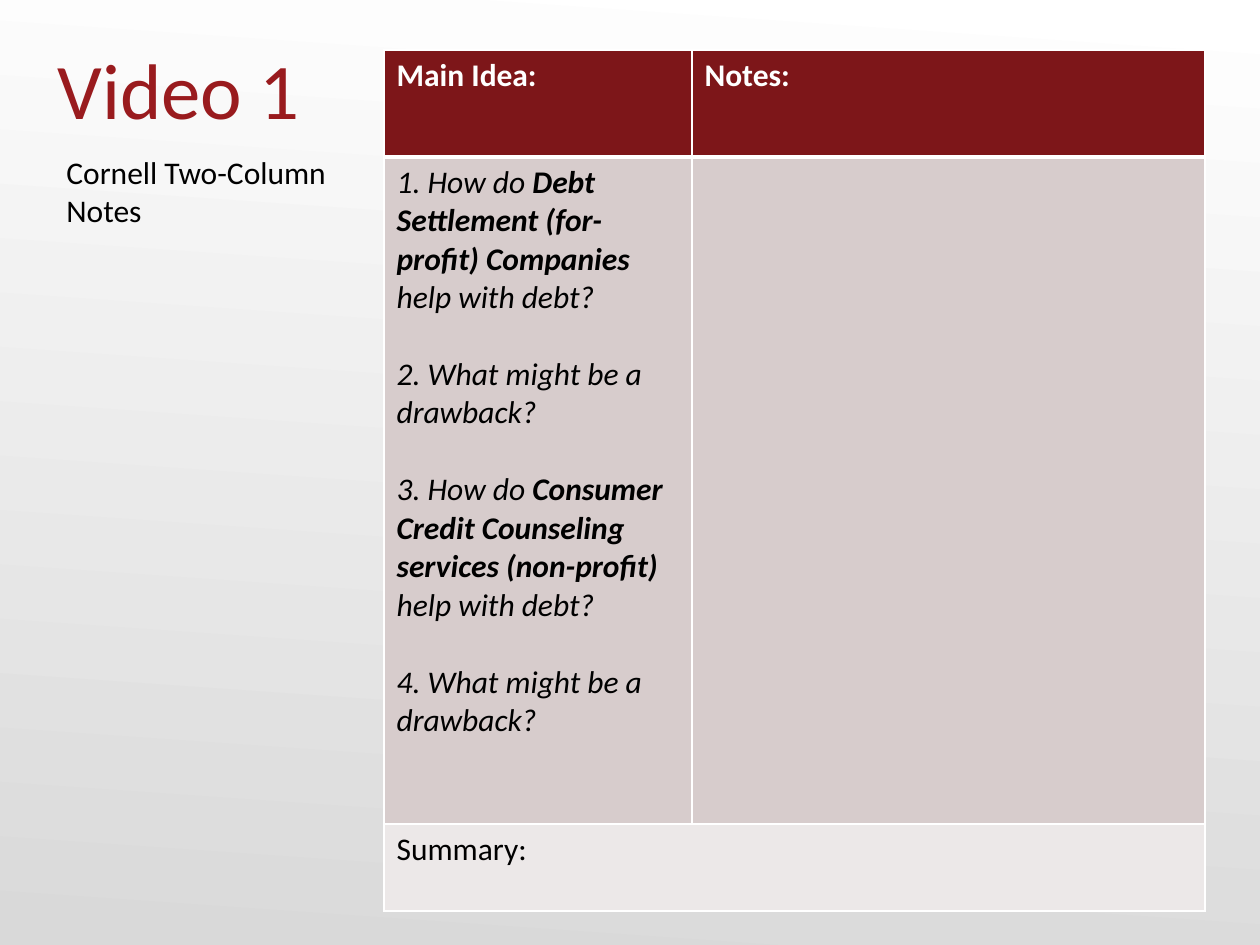
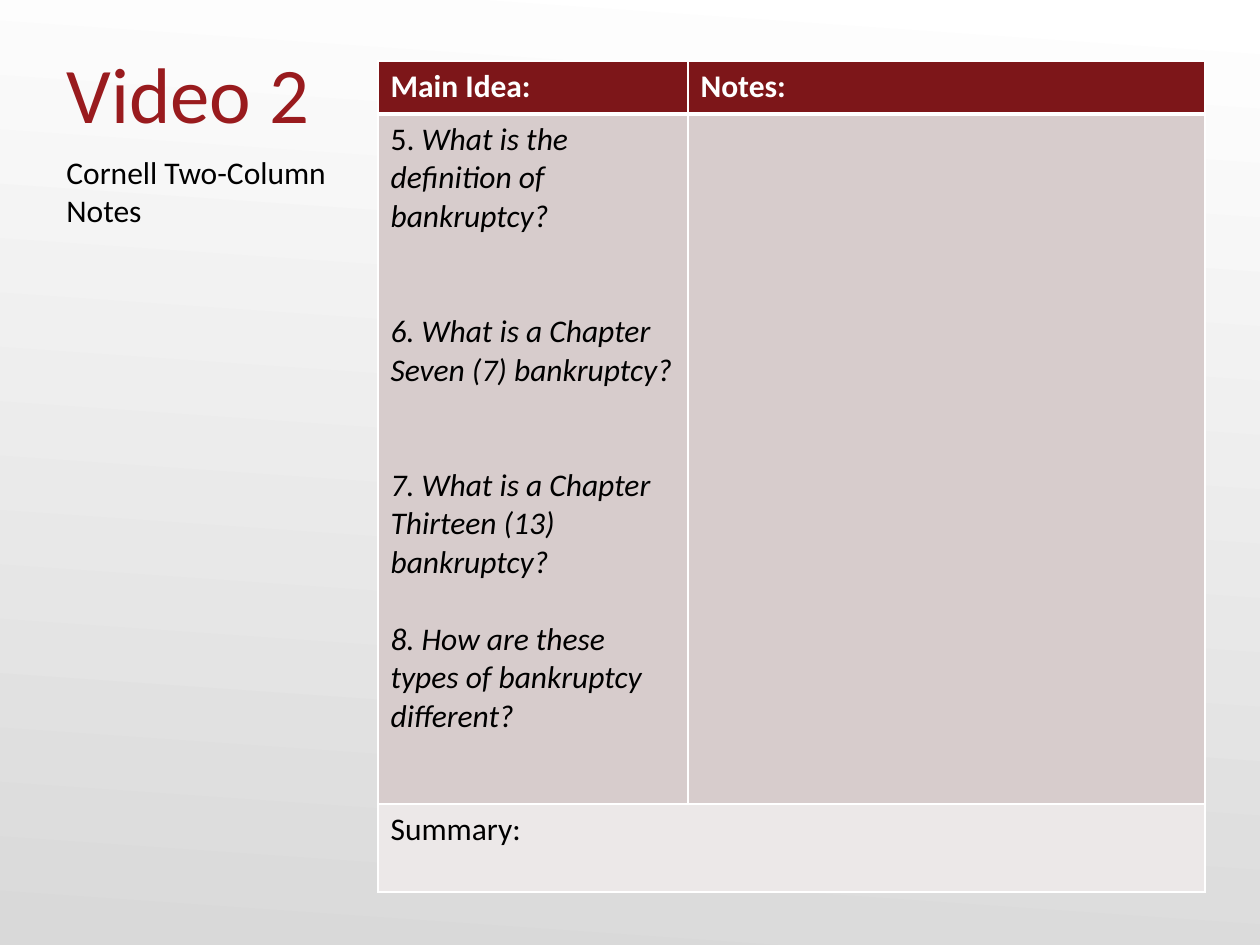
from dataclasses import dataclass
from typing import NamedTuple

from lxml.etree import SubElement
from pptx import Presentation
from pptx.dml.color import RGBColor
from pptx.enum.text import PP_ALIGN
from pptx.oxml.ns import qn
from pptx.util import Emu, Pt


@dataclass(frozen=True)
class Theme:
    face: str = "Calibri"
    title: int = 45
    body: int = 18
    line: int = 22  # height of one body line, in points
    red: str = "991B1E"
    head: str = "7D1619"
    rose: str = "D7CCCC"
    pale: str = "ECE8E8"
    white: str = "FFFFFF"
    grey: str = "D9D9D9"
    black: str = "000000"
    angle: int = 266


THEME = Theme()


class Box(NamedTuple):
    left: int
    top: int
    width: int
    height: int


class Run(NamedTuple):
    text: str
    bold: bool | None = None
    slant: bool | None = None


class Para(NamedTuple):
    runs: list[Run]
    gap: int = 0  # free lines above
    bold: bool = False
    slant: bool = False


@dataclass(frozen=True)
class Page:
    title: str
    spot: Box
    align: PP_ALIGN
    left: int
    top: int
    cols: list[int]
    rows: list[int]
    asks: list[Para]


def px(count: int) -> Emu:
    """Turn pixels (126 to the inch) into EMU."""
    return Emu(round(count * 914400 / 126))


def ask(*runs: Run, gap: int = 0) -> Para:
    return Para(list(runs), gap, slant=True)


def write(frame, paras: list[Para], size: int, color: str) -> None:
    for spot, para in enumerate(paras):
        line = frame.add_paragraph() if spot else frame.paragraphs[0]
        font = line.font
        font.name, font.size = THEME.face, Pt(size)
        font.bold, font.italic = para.bold, para.slant
        font.color.rgb = RGBColor.from_string(color)
        if para.gap:
            line.space_before = Pt(para.gap * THEME.line)
        for part in para.runs:
            run = line.add_run()
            run.text = part.text
            if part.bold is not None:
                run.font.bold = part.bold
            if part.slant is not None:
                run.font.italic = part.slant


def label(slide, box: Box, text: str, size: int, color: str,
          align: PP_ALIGN = PP_ALIGN.LEFT) -> None:
    frame = slide.shapes.add_textbox(*map(px, box)).text_frame
    frame.word_wrap = True
    write(frame, [Para([Run(text)])], size, color)
    frame.paragraphs[0].alignment = align


def edge(cell, top: int, base: int) -> None:
    """Draw white cell borders; widths are in points."""
    props = cell._tc.get_or_add_tcPr()
    for side, width in (("L", 1), ("R", 1), ("T", top), ("B", base)):
        line = SubElement(props, qn(f"a:ln{side}"), w=str(Pt(width)))
        fill = SubElement(line, qn("a:solidFill"))
        SubElement(fill, qn("a:srgbClr"), val=THEME.white)


def grid(slide, page: Page) -> None:
    size = sum(page.cols), sum(page.rows)
    box = Box(page.left, page.top, *size)
    table = slide.shapes.add_table(
        len(page.rows), len(page.cols), *map(px, box)).table
    for col, width in zip(table.columns, page.cols):
        col.width = px(width)
    # Each row: fill, top border, bottom border
    looks = [(THEME.head, 1, 3), (THEME.rose, 3, 1), (THEME.pale, 1, 1)]
    for row, height, (fill, top, base) in zip(table.rows, page.rows, looks):
        row.height = px(height)
        for cell in row.cells:
            edge(cell, top, base)
            cell.fill.solid()
            cell.fill.fore_color.rgb = RGBColor.from_string(fill)
    # Cell text
    for col, text in enumerate(("Main Idea:", "Notes:")):
        write(table.cell(0, col).text_frame,
              [Para([Run(text)], bold=True)], THEME.body, THEME.white)
    write(table.cell(1, 0).text_frame, page.asks, THEME.body, THEME.black)
    table.cell(2, 0).merge(table.cell(2, 1))
    write(table.cell(2, 0).text_frame,
          [Para([Run("Summary:")])], THEME.body, THEME.black)


def shade(slide) -> None:
    fill = slide.background.fill
    fill.gradient()
    fill.gradient_angle = THEME.angle
    for stop, place, color in zip(
            fill.gradient_stops, (0, 1), (THEME.white, THEME.grey)):
        stop.position = place
        stop.color.rgb = RGBColor.from_string(color)


def draw(deck, page: Page) -> None:
    slide = deck.slides.add_slide(deck.slide_layouts[6])
    shade(slide)
    grid(slide, page)
    label(slide, page.spot, page.title, THEME.title, THEME.red, page.align)
    label(slide, Box(54, 147, 297, 127), "Cornell Two-Column Notes",
          THEME.body, THEME.black)


PAGES = [
    Page("Video 1", Box(45, 35, 336, 108), PP_ALIGN.LEFT,
         384, 50, [308, 513], [107, 667, 87], [
             ask(Run("1. How do "),
                 Run("Debt Settlement (for-profit) Companies ", bold=True),
                 Run("help with debt?")),
             ask(Run("2. What might be a drawback?"), gap=1),
             ask(Run("3. How do "),
                 Run("Consumer Credit Counseling services (non-profit) ",
                     bold=True),
                 Run("help with debt?"), gap=1),
             ask(Run("4. What might be a drawback?"), gap=1),
         ]),
    Page("Video 2", Box(20, 39, 336, 108), PP_ALIGN.CENTER,
         378, 61, [310, 517], [53, 690, 88], [
             ask(Run("5. ", slant=False),
                 Run("What is the definition of bankruptcy?")),
             ask(Run("6. What is a Chapter Seven (7) bankruptcy?"), gap=2),
             ask(Run("7. What is a Chapter Thirteen (13) bankruptcy?"), gap=2),
             ask(Run("8. How are these types of bankruptcy different?"), gap=1),
         ]),
]


def main() -> None:
    deck = Presentation()
    deck.slide_width, deck.slide_height = px(1260), px(945)
    for page in PAGES:
        draw(deck, page)
    deck.save("out.pptx")


if __name__ == "__main__":
    main()
